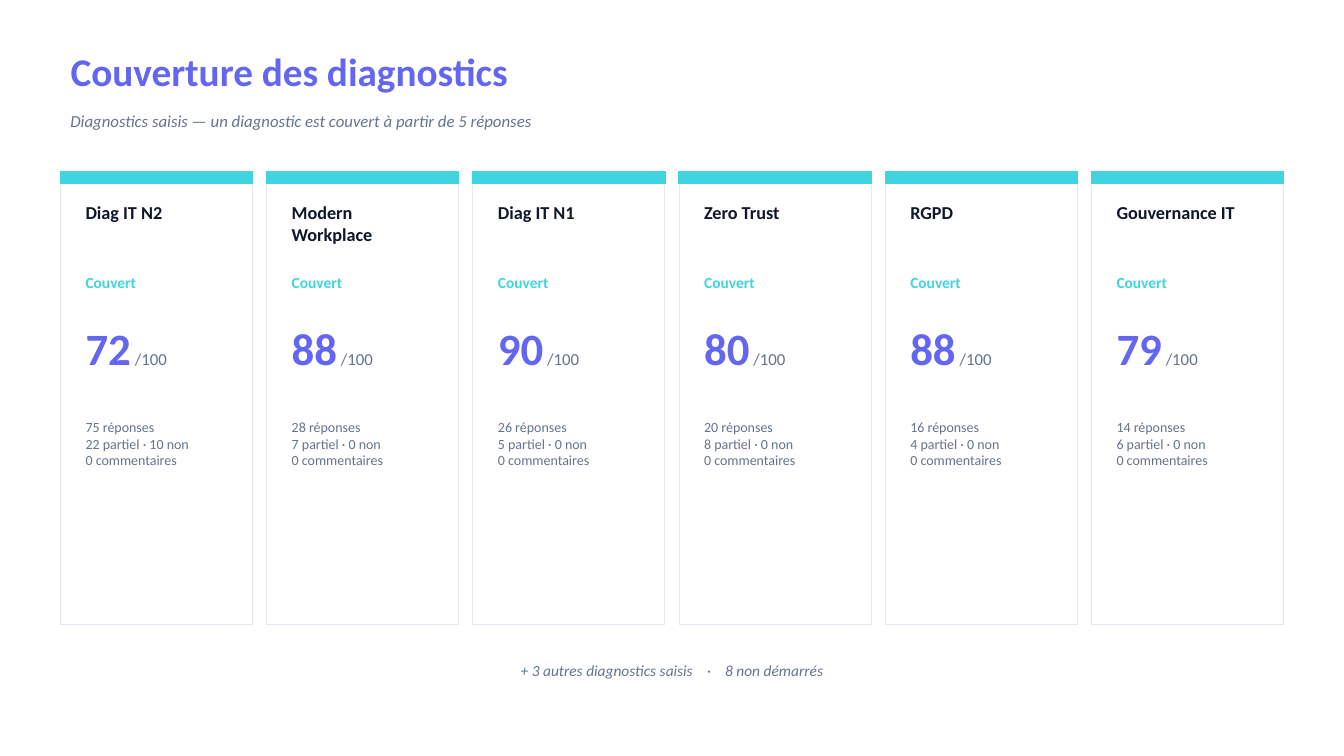
from dataclasses import dataclass

from pptx import Presentation
from pptx.dml.color import RGBColor
from pptx.enum.shapes import MSO_SHAPE as Preset
from pptx.enum.text import MSO_ANCHOR as Anchor, MSO_AUTO_SIZE as AutoSize, PP_ALIGN as Align
from pptx.util import Inches, Pt

STEP = Inches(0.05)
MARGIN = 12
CONTENT_WIDTH = 242.6
CARD_COUNT = 6
GUTTER = 2.8
CARD_WIDTH = (CONTENT_WIDTH - GUTTER * (CARD_COUNT - 1)) / CARD_COUNT
CARD_TOP = 34
PADDING = 3

INDIGO = "6366F1"
SLATE = "64748B"
CYAN = "3FD4E0"
INK = "0F172A"
BORDER = "E2E8F0"
WHITE = "FFFFFF"


@dataclass(frozen=True)
class Area:
    column: float
    row: float
    columns: float
    rows: float

    def bounds(self) -> tuple[int, ...]:
        return tuple(round(cells * STEP) for cells in (self.column, self.row, self.columns, self.rows))


@dataclass(frozen=True)
class Diagnostic:
    name: str
    score: int
    answers: int
    partial: int
    negative: int


DIAGNOSTICS = [
    Diagnostic("Diag IT N2", 72, 75, 22, 10),
    Diagnostic("Modern Workplace", 88, 28, 7, 0),
    Diagnostic("Diag IT N1", 90, 26, 5, 0),
    Diagnostic("Zero Trust", 80, 20, 8, 0),
    Diagnostic("RGPD", 88, 16, 4, 0),
    Diagnostic("Gouvernance IT", 79, 14, 6, 0),
]


def rgb(value: str) -> RGBColor:
    return RGBColor.from_string(value)


def write(paragraph, text: str, *, size: float, color: str, bold: bool = False,
          italic: bool = False, tracking: float = 0) -> None:
    run = paragraph.add_run()
    run.text = text
    run.font.name = "Calibri"
    run.font.size = Pt(size)
    run.font.bold = bold
    run.font.italic = italic
    run.font.color.rgb = rgb(color)
    if tracking:
        run._r.get_or_add_rPr().set("spc", str(round(tracking * 100)))


def prepare(frame, anchor: Anchor, align: Align = Align.LEFT):
    frame.word_wrap = True
    frame.auto_size = AutoSize.NONE
    frame.vertical_anchor = anchor
    first = frame.paragraphs[0]
    first.alignment = align
    return first


def add_text(slide, area: Area, anchor: Anchor = Anchor.MIDDLE, align: Align = Align.LEFT):
    return prepare(slide.shapes.add_textbox(*area.bounds()).text_frame, anchor, align)


def add_panel(slide, area: Area, fill: str, outline: str, weight: float) -> None:
    panel = slide.shapes.add_shape(Preset.RECTANGLE, *area.bounds())
    panel.shadow.inherit = False
    panel.fill.solid()
    panel.fill.fore_color.rgb = rgb(fill)
    panel.line.color.rgb = rgb(outline)
    panel.line.width = Pt(weight)


def add_title(slide, text: str) -> None:
    title = slide.shapes.title
    title.left, title.top, title.width, title.height = Area(MARGIN, 8, 240, 12).bounds()
    write(prepare(title.text_frame, Anchor.MIDDLE), text, size=28, color=INDIGO, bold=True)


def add_card(slide, diagnostic: Diagnostic, position: int) -> None:
    left = MARGIN + position * (CARD_WIDTH + GUTTER)
    inner_left = left + PADDING
    inner_width = CARD_WIDTH - 2 * PADDING

    add_panel(slide, Area(left, CARD_TOP, CARD_WIDTH, 90), WHITE, BORDER, 0.75)
    add_panel(slide, Area(left, CARD_TOP, CARD_WIDTH, 2.4), CYAN, CYAN, 1)

    name = add_text(slide, Area(inner_left, 39, inner_width, 14), Anchor.TOP)
    write(name, diagnostic.name, size=13, color=INK, bold=True)

    status = add_text(slide, Area(inner_left, 53, inner_width, 6))
    write(status, "Couvert", size=11, color=CYAN, bold=True)

    score = add_text(slide, Area(inner_left, 62, inner_width, 14))
    write(score, str(diagnostic.score), size=32, color=INDIGO, bold=True)
    write(score, " /100", size=12, color=SLATE)

    details = slide.shapes.add_textbox(*Area(inner_left, 82, inner_width, 38).bounds()).text_frame
    detail = prepare(details, Anchor.TOP)
    write(detail, f"{diagnostic.answers} réponses", size=10, color=SLATE)
    for line in (f"{diagnostic.partial} partiel · {diagnostic.negative} non", "0 commentaires"):
        detail = details.add_paragraph()
        detail.alignment = Align.LEFT
        write(detail, line, size=10, color=SLATE)


def add_summary(slide) -> None:
    summary = add_text(slide, Area(MARGIN, 129, CONTENT_WIDTH, 8), align=Align.CENTER)
    for text, tracking in (
        ("+ 3 autres diagnostics saisis", 0),
        (" ", 7.5),
        ("·", 0),
        (" ", 7.5),
        ("8 non démarrés", 0),
    ):
        write(summary, text, size=11, color=SLATE, italic=True, tracking=tracking)


def main() -> None:
    deck = Presentation()
    deck.slide_width = Inches(13.33)
    deck.slide_height = Inches(7.5)
    slide = deck.slides.add_slide(deck.slide_layouts[5])

    add_title(slide, "Couverture des diagnostics")
    subtitle = add_text(slide, Area(MARGIN, 20, 240, 8))
    write(subtitle, "Diagnostics saisis — un diagnostic est couvert à partir de 5 réponses",
          size=12, color=SLATE, italic=True)
    for position, diagnostic in enumerate(DIAGNOSTICS):
        add_card(slide, diagnostic, position)
    add_summary(slide)

    deck.save("out.pptx")


if __name__ == "__main__":
    main()
